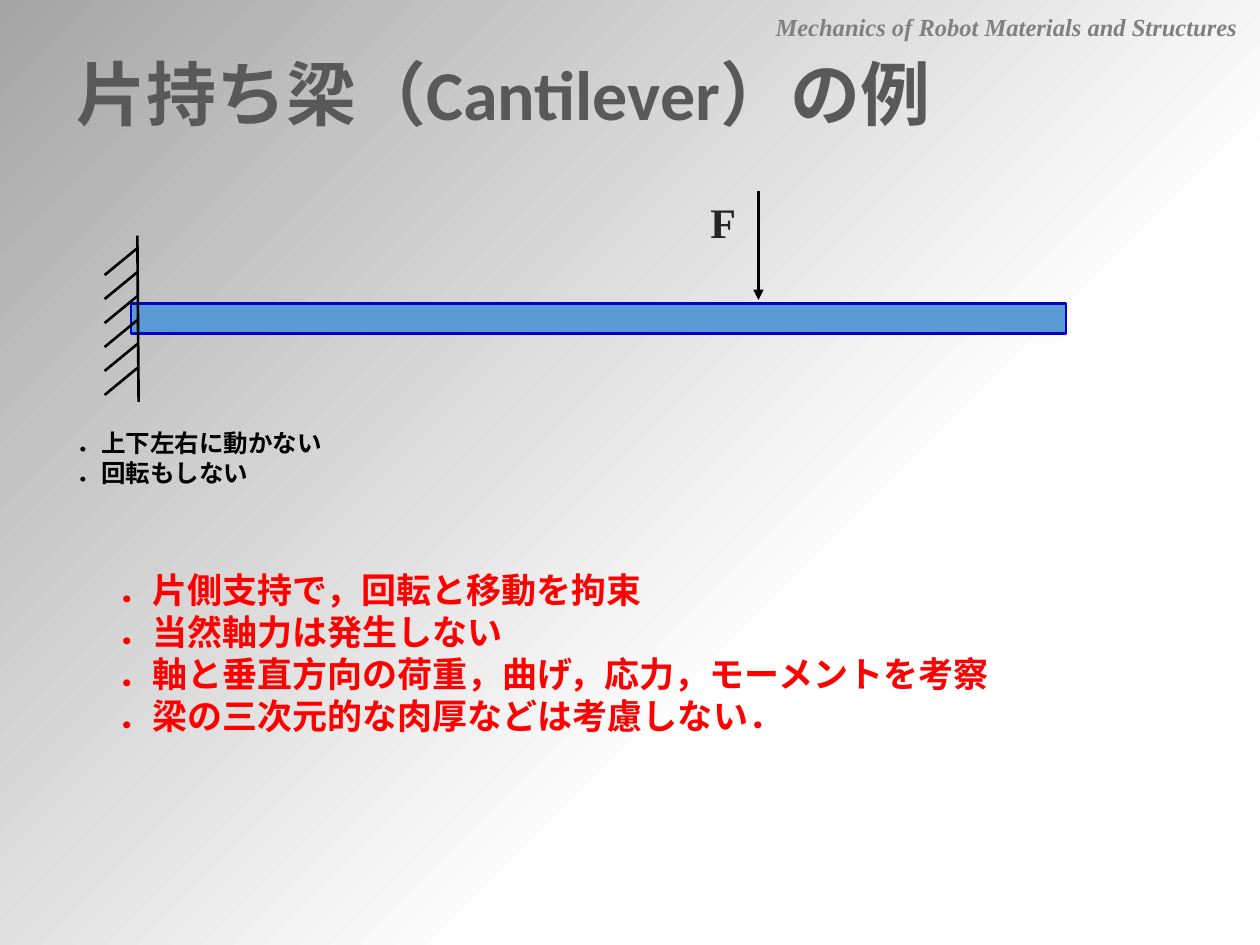
from lxml import etree
from pptx import Presentation
from pptx import util as u
from pptx.dml import color
from pptx.enum import shapes, text
from pptx.oxml import ns, parse_xml

SERIF = "Times New Roman"
ALIGN = text.PP_ALIGN

# place (left, top, width, height), lines, and the look of each text
TEXTS = [
    dict(place=(36.7, 30.2, 586.8, 51.8), lines=["片持ち梁（Cantilever）の例"],
         size=40, hue="595959", font="Calibri", spacing=0.9,
         anchor=text.MSO_ANCHOR.MIDDLE),
    dict(place=(433.4, 3.6, 283.7, 24.5),
         lines=["Mechanics of Robot Materials and Structures"],
         size=14, hue="808080", italic=True, align=ALIGN.CENTER),
    dict(place=(382.3, 108.7, 45.4, 36), lines=["F"],
         size=24, hue="262626", align=ALIGN.RIGHT),
    dict(place=(59.8, 321.1, 617.8, 152.6),
         lines=["．片側支持で，回転と移動を拘束",
                "．当然軸力は発生しない",
                "．軸と垂直方向の荷重，曲げ，応力，モーメントを考察",
                "．梁の三次元的な肉厚などは考慮しない．"],
         size=20, hue="FF0000", align=ALIGN.JUSTIFY),
    dict(place=(36.7, 241.2, 172.1, 41), lines=["．上下左右に動かない", "．回転もしない"],
         size=14, hue="000000", hanging=21.6),
]
BEAM = (74.9, 173.5, 534.2, 17.3)
FORCE = (433.4, 109.4, 433.4, 171.4)
WALL = (78.5, 134.6, 79.2, 229.7)
HATCH_COUNT, HATCH_TOP, HATCH_STEP = 6, 141.8, 13.7
HATCH_LEFT, HATCH_DROP = 59.8, 15.4

BACKGROUND = f"""<p:bg {ns.nsdecls("p", "a")}><p:bgPr>
<a:gradFill rotWithShape="1"><a:gsLst>
<a:gs pos="0"><a:srgbClr val="FFFFFF"><a:alpha val="70000"/></a:srgbClr></a:gs>
<a:gs pos="35000"><a:srgbClr val="FFFFFF"/></a:gs>
<a:gs pos="100000"><a:srgbClr val="A5A5A5"/></a:gs></a:gsLst>
<a:path path="circle"><a:fillToRect l="100000" t="100000"/></a:path>
<a:tileRect r="-100000" b="-100000"/>
</a:gradFill><a:effectLst/></p:bgPr></p:bg>"""


def points(values):
    return [u.Pt(value) for value in values]


def rgb(hue):
    return color.RGBColor.from_string(hue)


def add_text(slide, place, lines, size, hue, font=SERIF, italic=False, align=ALIGN.LEFT,
             anchor=text.MSO_ANCHOR.TOP, spacing=None, hanging=0):
    box = slide.shapes.add_textbox(*points(place))
    frame = box.text_frame
    frame.word_wrap = True
    frame.vertical_anchor = anchor
    for index, line in enumerate(lines):
        para = frame.add_paragraph() if index else frame.paragraphs[0]
        para.alignment = align
        para.line_spacing = spacing
        if hanging:
            properties = para._p.get_or_add_pPr()
            properties.set("marL", str(u.Pt(hanging)))
            properties.set("indent", str(u.Pt(-hanging)))
        span = para.add_run()
        span.text = line
        span.font.name = font
        span.font.size = u.Pt(size)
        span.font.bold = True
        span.font.italic = italic
        span.font.color.rgb = rgb(hue)


def add_line(parent, ends, arrow=False):
    line = parent.shapes.add_connector(shapes.MSO_CONNECTOR.STRAIGHT, *points(ends))
    line.line.color.rgb = rgb("000000")
    line.line.width = u.Pt(1.5)
    if arrow:
        etree.SubElement(line.line._get_or_add_ln(), ns.qn("a:tailEnd"), type="triangle")
    etree.SubElement(line._element.spPr, ns.qn("a:effectLst"))


def add_beam(slide):
    beam = slide.shapes.add_shape(shapes.MSO_SHAPE.RECTANGLE, *points(BEAM))
    beam.shadow.inherit = False
    beam.fill.solid()
    beam.fill.fore_color.rgb = rgb("5B9BD5")
    beam.line.color.rgb = rgb("0000CC")
    beam.line.width = u.Pt(1.5)


def add_fixed_wall(slide):
    wall = slide.shapes.add_group_shape()
    add_line(wall, WALL)
    for index in range(HATCH_COUNT):
        top = HATCH_TOP + index * HATCH_STEP
        add_line(wall, (WALL[0], top, HATCH_LEFT, top + HATCH_DROP))


def main():
    deck = Presentation()
    deck.slide_width, deck.slide_height = points((720, 540))
    slide = deck.slides.add_slide(deck.slide_layouts[6])
    slide._element.cSld.insert(0, parse_xml(BACKGROUND))
    add_beam(slide)
    add_line(slide, FORCE, arrow=True)
    add_fixed_wall(slide)
    for item in TEXTS:
        add_text(slide, **item)
    deck.save("out.pptx")


if __name__ == "__main__":
    main()
